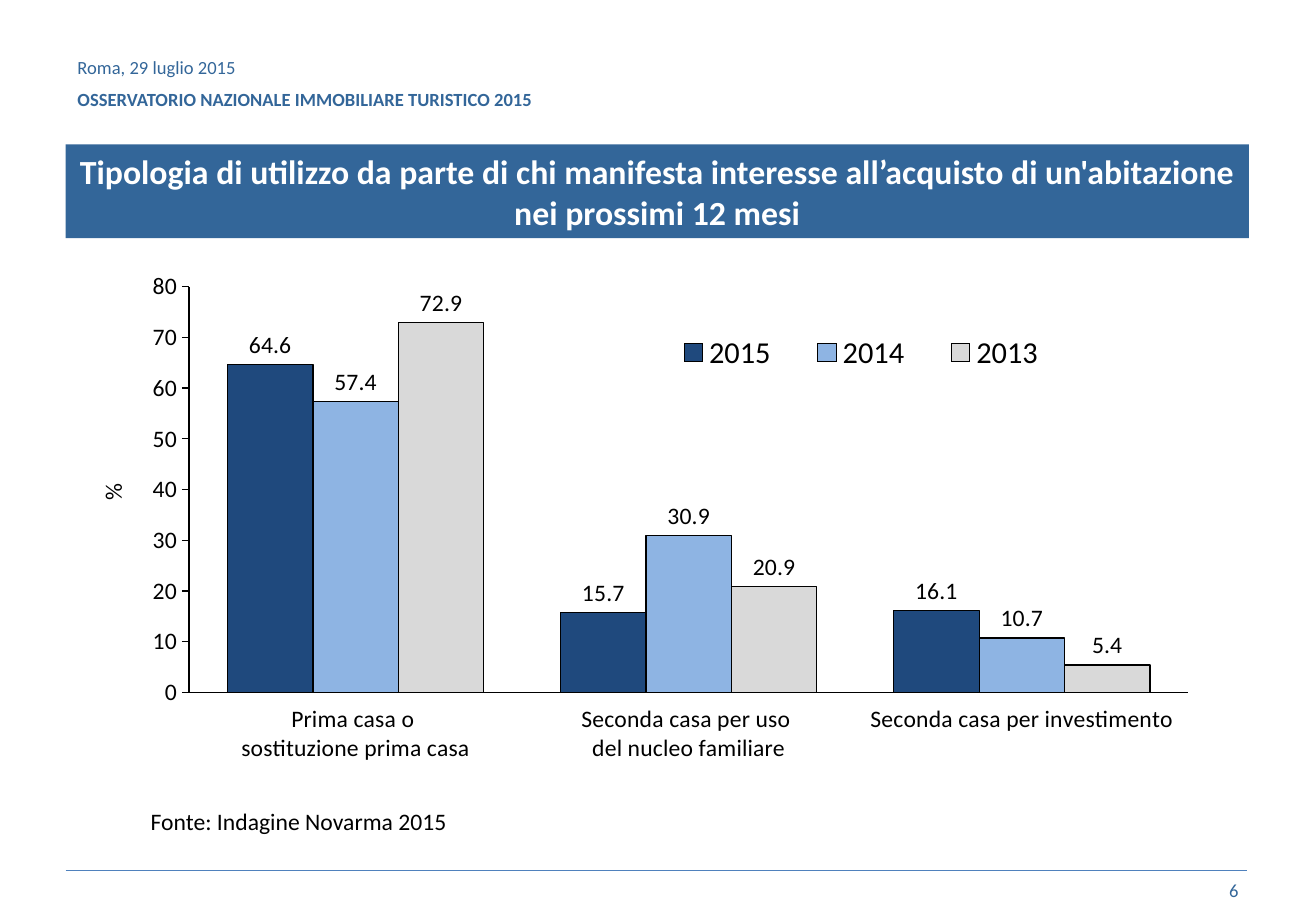
from lxml import etree
from pptx import Presentation
from pptx.chart.data import CategoryChartData
from pptx.dml.color import RGBColor
from pptx.enum.chart import (XL_CHART_TYPE, XL_LABEL_POSITION, XL_LEGEND_POSITION,
                             XL_TICK_LABEL_POSITION, XL_TICK_MARK)
from pptx.enum.shapes import MSO_CONNECTOR
from pptx.enum.text import MSO_ANCHOR, MSO_AUTO_SIZE, PP_ALIGN
from pptx.oxml.ns import qn
from pptx.util import Cm, Pt

FONT = "Calibri"
COLORS = {"brand": "336699", "rule": "4F81BD", "white": "FFFFFF", "black": "000000",
          "2015": "1F497D", "2014": "8EB4E3", "2013": "D9D9D9"}
CATEGORIES = ["Prima casa o \nsostituzione prima casa",
              "Seconda casa per uso \ndel nucleo familiare",
              "Seconda casa per investimento"]
SERIES = {"2015": (64.6, 15.7, 16.1), "2014": (57.4, 30.9, 10.7), "2013": (72.9, 20.9, 5.4)}


def color(name):
    return RGBColor.from_string(COLORS[name])


def place_chart_part(element, index, **fractions):
    """Give a chart part a manual layout, in fractions of the chart's size."""
    for old_layout in element.findall(qn("c:layout")):
        element.remove(old_layout)
    layout = etree.Element(qn("c:layout"))
    manual = etree.SubElement(layout, qn("c:manualLayout"))
    for tag, value in fractions.items():
        etree.SubElement(manual, qn("c:" + tag)).set("val", str(value))
    element.insert(index, layout)


presentation = Presentation()
presentation.slide_width, presentation.slide_height = Cm(27.51), Cm(19.05)
slide = presentation.slides.add_slide(presentation.slide_layouts[5])

# Title band
title = slide.shapes.title
title.left, title.top, title.width, title.height = Cm(1.37), Cm(3.02), Cm(24.74), Cm(1.96)
title.fill.solid()
title.fill.fore_color.rgb = color("brand")
title.text_frame.text = ("Tipologia di utilizzo da parte di chi manifesta interesse "
                         "all’acquisto di un'abitazione nei prossimi 12 mesi")
title.text_frame.word_wrap = True
title.text_frame.auto_size = MSO_AUTO_SIZE.NONE
title.text_frame.vertical_anchor = MSO_ANCHOR.MIDDLE
title_paragraph = title.text_frame.paragraphs[0]
title_paragraph.alignment = PP_ALIGN.CENTER
title_paragraph.font.name = FONT
title_paragraph.font.size = Pt(20)
title_paragraph.font.bold = True
title_paragraph.font.color.rgb = color("white")

# Header, source and page number
TEXTS = [
    ("Roma, 29 luglio 2015\nOSSERVATORIO NAZIONALE IMMOBILIARE TURISTICO 2015",
     (1.37, 0.76, 20.4, 1.96), 11, "brand", PP_ALIGN.LEFT, MSO_ANCHOR.MIDDLE),
    ("Fonte: Indagine Novarma 2015",
     (2.9, 16.74, 7.54, 0.86), 14, "black", PP_ALIGN.LEFT, MSO_ANCHOR.TOP),
    ("6", (19.71, 18.11, 6.43, 1.02), 11, "brand", PP_ALIGN.RIGHT, MSO_ANCHOR.MIDDLE),
]
for text, box, size, color_name, alignment, anchor in TEXTS:
    text_frame = slide.shapes.add_textbox(*map(Cm, box)).text_frame
    text_frame.text = text
    text_frame.word_wrap = True
    text_frame.vertical_anchor = anchor
    for number, paragraph in enumerate(text_frame.paragraphs):
        paragraph.alignment = alignment
        paragraph.font.name = FONT
        paragraph.font.size = Pt(size)
        paragraph.font.color.rgb = color(color_name)
        if number > 0:
            paragraph.space_before = Pt(6)
            paragraph.font.bold = True

# Footer rule
rule = slide.shapes.add_connector(MSO_CONNECTOR.STRAIGHT, Cm(1.37), Cm(18.19), Cm(26.06), Cm(18.19))
rule.line.color.rgb = color("rule")
rule.line.width = Pt(0.25)
etree.SubElement(rule._element.spPr, qn("a:effectLst"))

# Chart
chart_data = CategoryChartData()
chart_data.categories = CATEGORIES
for year, values in SERIES.items():
    chart_data.add_series(year, values)
chart = slide.shapes.add_chart(XL_CHART_TYPE.COLUMN_CLUSTERED, Cm(1.68), Cm(5.41),
                               Cm(24.18), Cm(11.51), chart_data).chart
chart.has_title = False
chart.font.name = FONT
chart.font.size = Pt(14)
chart.font.color.rgb = color("black")

plot = chart.plots[0]
plot.gap_width = 90
plot.overlap = 0
plot.vary_by_categories = False
for series in plot.series:
    series.format.fill.solid()
    series.format.fill.fore_color.rgb = color(series.name)
    series.format.line.color.rgb = color("black")
    series.format.line.width = Pt(0.75)
    labels = series.data_labels
    labels.show_value = True
    labels.position = XL_LABEL_POSITION.OUTSIDE_END
    labels.number_format = "0.0"
    labels.number_format_is_linked = False

category_axis, value_axis = chart.category_axis, chart.value_axis
for axis, tick_mark in ((category_axis, XL_TICK_MARK.NONE), (value_axis, XL_TICK_MARK.OUTSIDE)):
    axis.has_major_gridlines = False
    axis.major_tick_mark = tick_mark
    axis.minor_tick_mark = XL_TICK_MARK.NONE
    axis.tick_label_position = XL_TICK_LABEL_POSITION.LOW
    axis.format.line.color.rgb = color("black")
    axis.format.line.width = Pt(0.75)
value_axis.minimum_scale, value_axis.maximum_scale, value_axis.major_unit = 0, 80, 10
value_axis.tick_labels.number_format = "#,##0"
value_axis.tick_labels.number_format_is_linked = False

axis_title = value_axis.axis_title
axis_title.text_frame.text = "%"
axis_title.text_frame._txBody.bodyPr.set("rot", "-5400000")
axis_title_font = axis_title.text_frame.paragraphs[0].runs[0].font
axis_title_font.name = FONT
axis_title_font.size = Pt(14)
axis_title_font.bold = False
axis_title_font.color.rgb = color("black")

chart.has_legend = True
legend = chart.legend
legend.position = XL_LEGEND_POSITION.BOTTOM
legend.include_in_layout = False
legend.font.name = FONT
legend.font.size = Pt(18)
legend.font.color.rgb = color("black")

place_chart_part(chart._chartSpace.chart.plotArea, 0, layoutTarget="inner", xMode="edge",
                 yMode="edge", x=0.094, y=0.051, w=0.864, h=0.737)
place_chart_part(axis_title._element, 1, xMode="edge", yMode="edge", x=0.01, y=0.4)
place_chart_part(legend._element, 1, xMode="edge", yMode="edge", x=0.49, y=0.13, w=0.37, h=0.08)

presentation.save("out.pptx")
